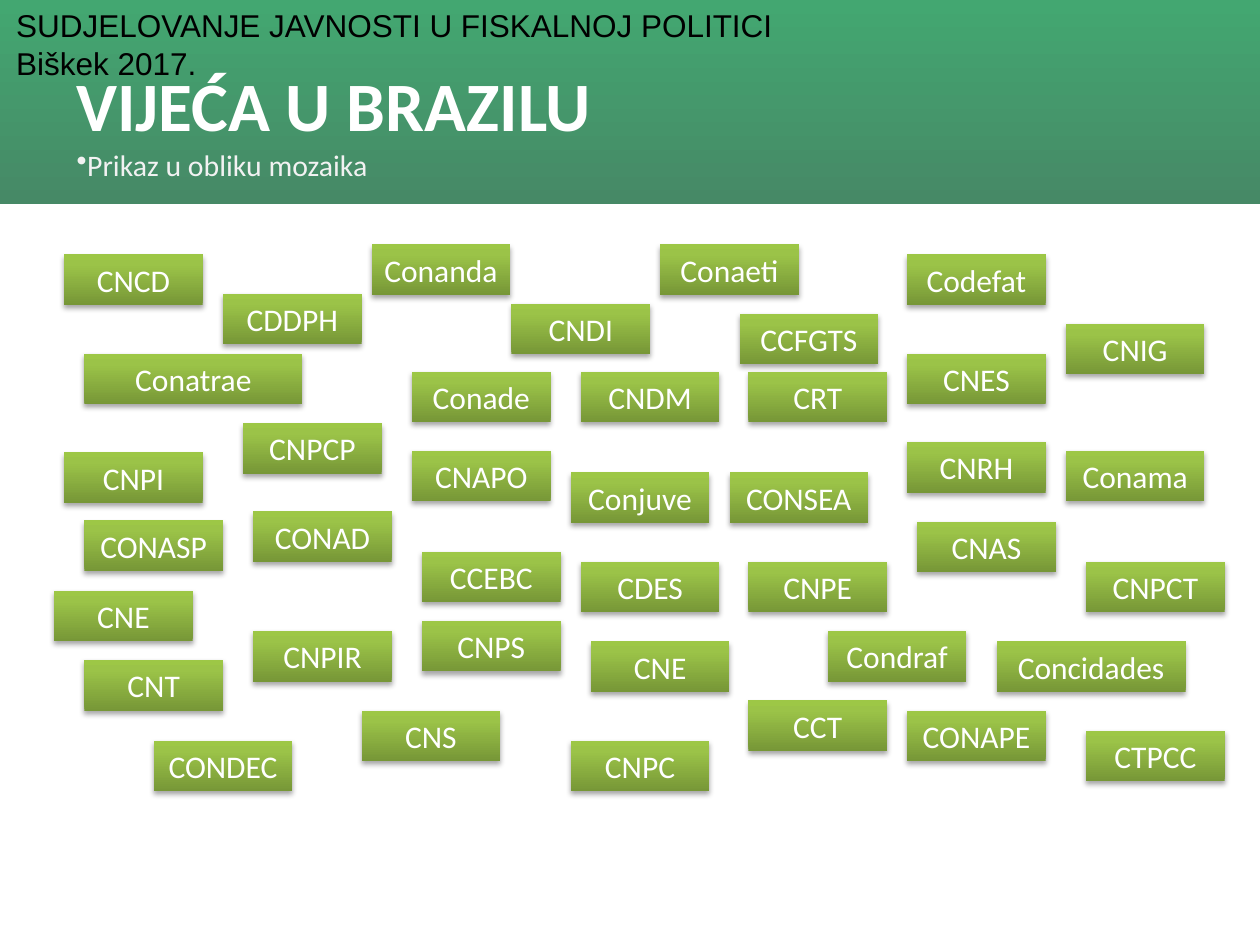
import pptx
import pptx.dml.color
import pptx.enum.shapes
import pptx.enum.text
import pptx.oxml
import pptx.oxml.ns
import pptx.util
from dataclasses import dataclass
from lxml import etree

Inches = pptx.util.Inches
Pt = pptx.util.Pt
Anchor = pptx.enum.text.MSO_ANCHOR
Align = pptx.enum.text.PP_ALIGN
Fit = pptx.enum.text.MSO_AUTO_SIZE
RECT = pptx.enum.shapes.MSO_SHAPE.RECTANGLE

COLORS = {
    "head_top": "43A771",
    "head_end": "468966",
    "tile_low": "779737",
    "tile_mid": "9BC348",
    "tile_top": "9DC746",
    "white": "FFFFFF",
    "pale": "F2F2F2",
    "black": "000000",
}
HEAD_STOPS = [(0, "head_top"), (100, "head_end")]
TILE_STOPS = [(0, "tile_low"), (80, "tile_mid"), (100, "tile_top")]


@dataclass
class Tile:
    name: str
    left: float
    top: float
    width: float = 1.1


TILES = [
    Tile("CNCD", 0.51, 2.02), Tile("CDDPH", 1.77, 2.33),
    Tile("Conanda", 2.95, 1.94), Tile("CNDI", 4.06, 2.41),
    Tile("Conaeti", 5.24, 1.94), Tile("CCFGTS", 5.87, 2.49),
    Tile("Codefat", 7.2, 2.02), Tile("Conatrae", 0.67, 2.81, 1.73),
    Tile("Conade", 3.27, 2.95), Tile("CNDM", 4.61, 2.95),
    Tile("CRT", 5.94, 2.95), Tile("CNES", 7.2, 2.81),
    Tile("CNIG", 8.46, 2.57), Tile("CNPI", 0.51, 3.59),
    Tile("CNPCP", 1.93, 3.36), Tile("CNAPO", 3.27, 3.58),
    Tile("Conjuve", 4.53, 3.75), Tile("CONSEA", 5.79, 3.75),
    Tile("CNRH", 7.2, 3.51), Tile("Conama", 8.46, 3.58),
    Tile("CONASP", 0.67, 4.13), Tile("CONAD", 2.01, 4.06),
    Tile("CCEBC", 3.35, 4.38), Tile("CDES", 4.61, 4.46),
    Tile("CNPE", 5.94, 4.46), Tile("CNAS", 7.28, 4.14),
    Tile("CNPCT", 8.62, 4.46), Tile("CNE", 0.43, 4.69),
    Tile("CNPIR", 2.01, 5.01), Tile("CNPS", 3.35, 4.93),
    Tile("CNE", 4.69, 5.09), Tile("Condraf", 6.57, 5.01),
    Tile("Concidades", 7.91, 5.09, 1.5), Tile("CNT", 0.67, 5.24),
    Tile("CONDEC", 1.22, 5.88), Tile("CNS", 2.87, 5.64),
    Tile("CNPC", 4.53, 5.88), Tile("CCT", 5.94, 5.56),
    Tile("CONAPE", 7.2, 5.64), Tile("CTPCC", 8.62, 5.8),
]


def set_all(item, values: dict) -> None:
    for key, value in values.items():
        setattr(item, key, value)


def write(shape, text: str, frame: dict, font: dict, color: str,
          align=None, bullet: str = "") -> None:
    set_all(shape.text_frame, {"word_wrap": True, **frame})
    para = shape.text_frame.paragraphs[0]
    para.text = text
    para.alignment = align
    if bullet:
        props = para._p.get_or_add_pPr()
        mark = etree.SubElement(props, pptx.oxml.ns.qn("a:buChar"))
        mark.set("char", bullet)
    for run in para.runs:
        set_all(run.font, font)
        run.font.color.rgb = pptx.dml.color.RGBColor.from_string(COLORS[color])


def add_rect(slide, box: tuple, stops: list, angle: int):
    """Add a borderless rectangle; angle turns counterclockwise."""
    rect = slide.shapes.add_shape(RECT, *map(Inches, box))
    rect.shadow.inherit = False
    rect.line.fill.background()
    rect.fill.gradient()
    rect.fill.gradient_angle = angle
    ns = pptx.oxml.ns.nsdecls("a")
    row = rect._element.spPr.find(".//" + pptx.oxml.ns.qn("a:gsLst"))
    for old in list(row):
        row.remove(old)
    for place, color in stops:
        row.append(pptx.oxml.parse_xml(
            f'<a:gs {ns} pos="{place * 1000}">'
            f'<a:srgbClr val="{COLORS[color]}"/></a:gs>'))
    return rect


def add_shade(shape) -> None:
    """Put a soft shadow just below the shape."""
    ns = pptx.oxml.ns.nsdecls("a")
    effects = shape._element.spPr.find(pptx.oxml.ns.qn("a:effectLst"))
    effects.append(pptx.oxml.parse_xml(
        f'<a:outerShdw {ns} blurRad="{Pt(3.1)}" dist="{Pt(1.8)}" '
        f'dir="5400000" rotWithShape="0"><a:srgbClr val="{COLORS["black"]}">'
        '<a:alpha val="35000"/></a:srgbClr></a:outerShdw>'))


def add_tile(slide, tile: Tile) -> None:
    rect = add_rect(slide, (tile.left, tile.top, tile.width, 0.4),
                    TILE_STOPS, 90)
    add_shade(rect)
    frame = {"vertical_anchor": Anchor.TOP, "auto_size": Fit.SHAPE_TO_FIT_TEXT,
             "margin_left": Inches(0.08), "margin_right": Inches(0.08)}
    write(rect, tile.name, frame, {"name": "Calibri", "size": Pt(18)},
          "white", Align.CENTER)


def add_text(slide, box: tuple, *args, **more) -> None:
    write(slide.shapes.add_textbox(*map(Inches, box)), *args, **more)


def main() -> None:
    deck = pptx.Presentation()
    set_all(deck, {"slide_width": Inches(10), "slide_height": Inches(7.5)})
    slide = deck.slides.add_slide(deck.slide_layouts[6])
    middle = {"vertical_anchor": Anchor.MIDDLE}

    add_rect(slide, (0, 0, 10, 1.62), HEAD_STOPS, 270)
    add_text(slide, (0.03, 0, 9.78, 0.4),
             "SUDJELOVANJE JAVNOSTI U FISKALNOJ POLITICI\vBiškek 2017.",
             {"auto_size": Fit.SHAPE_TO_FIT_TEXT},
             {"name": "Arial", "size": Pt(18)}, "black")
    add_text(slide, (0.51, 1.07, 8.98, 0.47), "Prikaz u obliku mozaika",
             middle, {"name": "Calibri", "size": Pt(17)}, "pale", bullet="•")
    for tile in TILES:
        add_tile(slide, tile)
    add_text(slide, (0.51, 0.44, 9, 0.77), "VIJEĆA U BRAZILU", middle,
             {"name": "Calibri", "size": Pt(39.6), "bold": True}, "white")
    deck.save("out.pptx")


if __name__ == "__main__":
    main()
